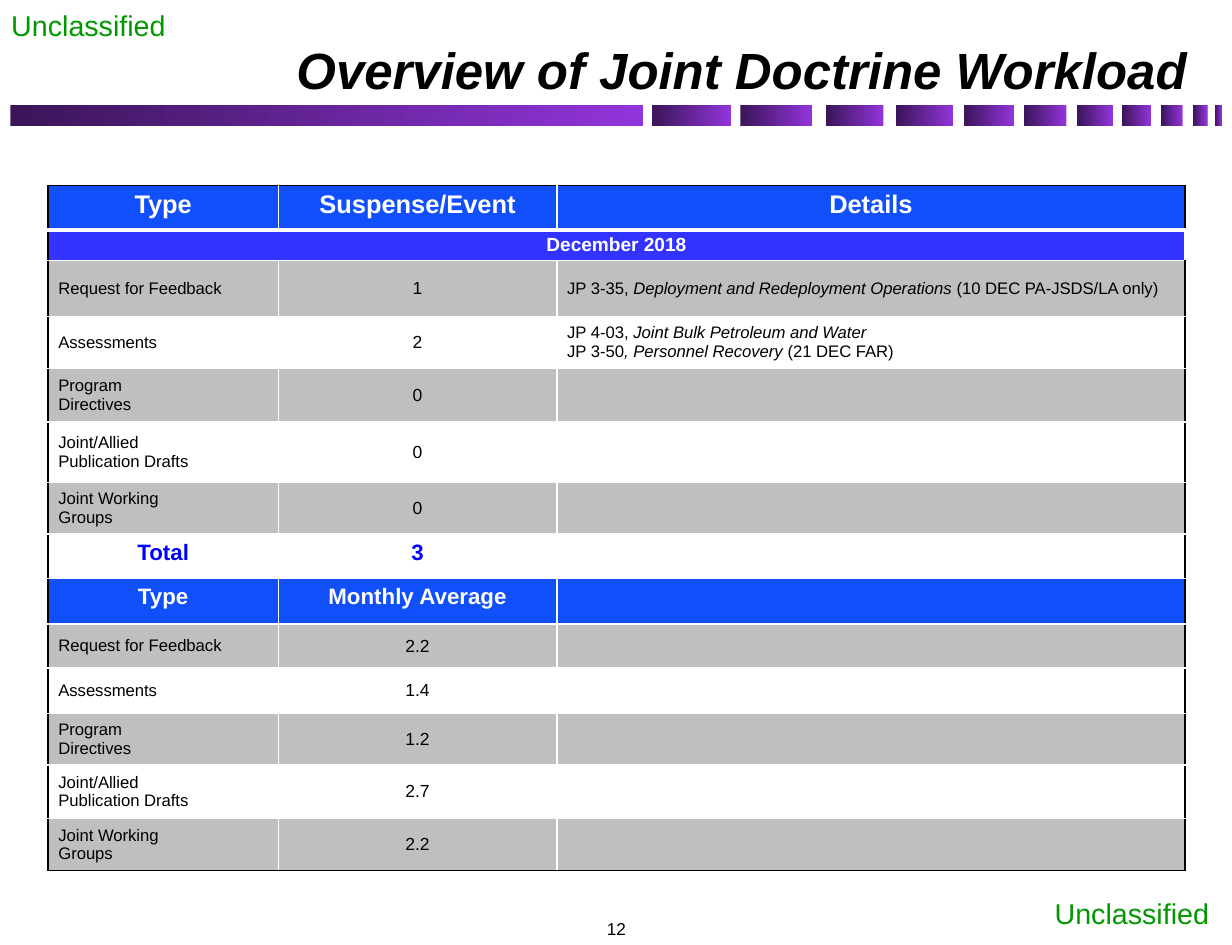
from collections import namedtuple

from lxml import etree
from pptx import Presentation
from pptx.dml.color import RGBColor
from pptx.enum import shapes, text
from pptx.oxml.ns import qn
from pptx.util import Pt

BLACK = RGBColor(0x00, 0x00, 0x00)
WHITE = RGBColor(0xFF, 0xFF, 0xFF)
GREY = RGBColor(0xBF, 0xBF, 0xBF)
GREEN = RGBColor(0x00, 0x99, 0x00)
HEADER_BLUE = RGBColor(0x11, 0x4F, 0xFB)
MONTH_BLUE = RGBColor(0x33, 0x33, 0xFF)
TOTAL_BLUE = RGBColor(0x00, 0x00, 0xFF)
DARK_PURPLE = RGBColor(0x3A, 0x15, 0x58)
PURPLE = RGBColor(0x92, 0x34, 0xDB)

LEFT, CENTER, RIGHT = text.PP_ALIGN.LEFT, text.PP_ALIGN.CENTER, text.PP_ALIGN.RIGHT
TOP, MIDDLE, BOTTOM = text.MSO_ANCHOR.TOP, text.MSO_ANCHOR.MIDDLE, text.MSO_ANCHOR.BOTTOM

# Left edge and width of each block in the bar under the title
BAR_BLOCKS = [(6.5, 397.5), (409.7, 49.5), (465.1, 45), (519.1, 36), (563, 36),
              (605.5, 31.5), (643, 27), (676.8, 22.5), (704.9, 18),
              (729.4, 13.5), (749.5, 9), (763.2, 4.5)]

COLUMN_WIDTHS = [144.7, 175, 394.6]
ROW_HEIGHTS = [27.6, 19.2, 35.5, 31.4, 33.9, 38, 31.4,
               28, 28.6, 27.6, 28.6, 31.4, 33.9, 31.7]

Look = namedtuple("Look", "fill color size bold anchor margins")
HEADER = Look(HEADER_BLUE, WHITE, 16, True, TOP, (5, 3))
MONTH = Look(MONTH_BLUE, WHITE, 12, True, MIDDLE, (5, 0))
TOTAL = Look(WHITE, TOTAL_BLUE, 14, True, TOP, (6.5, 3.6))
AVERAGE = TOTAL._replace(fill=HEADER_BLUE, color=WHITE)
ITEM = Look(GREY, BLACK, 10.5, False, MIDDLE, (6.5, 3.6))

# A cell is a list of paragraphs; a paragraph is a list of (text, italic) runs
TYPES = [["Request for Feedback"], ["Assessments"], ["Program", "Directives"],
         ["Joint/Allied", "Publication Drafts"], ["Joint Working", "Groups"]]
DETAILS = [
    [[("JP 3-35, ", False), ("Deployment and Redeployment Operations ", True),
      ("(10 DEC PA-JSDS/LA only)", False)]],
    [[("JP 4-03, ", False), ("Joint Bulk Petroleum and Water", True)],
     [("JP 3-50", False), (", Personnel Recovery ", True), ("(21 DEC FAR)", False)]],
    [], [], [],
]


def plain(*lines):
    return [[(line, False)] for line in lines]


def set_font(font, size, color, bold=False):
    font.name = "Arial"
    font.size = Pt(size)
    font.color.rgb = color
    font.bold = bold


def add_bar_block(slide, left, width):
    sp = slide.shapes.add_shape(shapes.MSO_SHAPE.RECTANGLE,
                                Pt(left), Pt(66), Pt(width), Pt(13.2))
    sp.shadow.inherit = False
    sp.line.fill.background()
    sp.fill.gradient()
    sp.fill.gradient_angle = 0
    for stop, color in zip(sp.fill.gradient_stops, (DARK_PURPLE, PURPLE)):
        stop.color.rgb = color


def add_label(slide, label, box, size, color, align=LEFT, anchor=TOP):
    tf = slide.shapes.add_textbox(*map(Pt, box)).text_frame
    tf.word_wrap = False
    tf.vertical_anchor = anchor
    p = tf.paragraphs[0]
    p.text = label
    p.alignment = align
    set_font(p.font, size, color)


def set_title(slide, title):
    sp = slide.shapes.title
    sp.left, sp.top, sp.width, sp.height = Pt(182), Pt(21), Pt(568), Pt(45.2)
    tf = sp.text_frame
    tf.auto_size = text.MSO_AUTO_SIZE.NONE
    tf.vertical_anchor = BOTTOM
    tf.margin_left = tf.margin_right = tf.margin_top = tf.margin_bottom = Pt(3.6)
    p = tf.paragraphs[0]
    p.text = title
    p.alignment = RIGHT
    set_font(p.font, 32, BLACK, True)
    p.font.italic = True


def set_borders(cell, sides):
    """Draw cell borders; sides lists (colour, width) for left, right, top, bottom."""
    tc_pr = cell._tc.get_or_add_tcPr()
    for i, (tag, (color, width)) in enumerate(zip(("a:lnL", "a:lnR", "a:lnT", "a:lnB"), sides)):
        ln = etree.Element(qn(tag), w=str(Pt(width)))
        fill = etree.SubElement(ln, qn("a:solidFill"))
        etree.SubElement(fill, qn("a:srgbClr"), val=str(color))
        tc_pr.insert(i, ln)


def fill_cell(cell, paragraphs, look, align):
    cell.fill.solid()
    cell.fill.fore_color.rgb = look.fill
    cell.vertical_anchor = look.anchor
    side, end = look.margins
    cell.margin_left = cell.margin_right = Pt(side)
    cell.margin_top = cell.margin_bottom = Pt(end)
    tf = cell.text_frame
    for i, runs in enumerate(paragraphs or [[]]):
        p = tf.add_paragraph() if i else tf.paragraphs[0]
        p.alignment = align
        set_font(p.font, look.size, look.color, look.bold)
        for words, italic in runs:
            r = p.add_run()
            r.text = words
            r.font.italic = italic


def item_rows(values, details):
    """Rows for the five work types, shaded grey and white in turn."""
    for i, (kind, value, detail) in enumerate(zip(TYPES, values, details)):
        look = ITEM._replace(fill=WHITE if i % 2 else GREY)
        yield look, [plain(*kind), plain(value), detail]


def workload_rows():
    yield HEADER, [plain("Type"), plain("Suspense/Event"), plain("Details")]
    yield MONTH, [plain("December 2018"), [], []]
    yield from item_rows(["1", "2", "0", "0", "0"], DETAILS)
    yield TOTAL, [plain("Total"), plain("3"), []]
    yield AVERAGE, [plain("Type"), plain("Monthly Average"), []]
    yield from item_rows(["2.2", "1.4", "1.2", "2.7", "2.2"], [[]] * len(TYPES))


def add_workload_table(slide):
    last_row, last_col = len(ROW_HEIGHTS) - 1, len(COLUMN_WIDTHS) - 1
    table = slide.shapes.add_table(
        last_row + 1, last_col + 1, Pt(30.2), Pt(116.8),
        Pt(sum(COLUMN_WIDTHS)), Pt(sum(ROW_HEIGHTS))).table
    table.first_row = table.horz_banding = False
    for column, width in zip(table.columns, COLUMN_WIDTHS):
        column.width = Pt(width)
    for row, height in zip(table.rows, ROW_HEIGHTS):
        row.height = Pt(height)

    outer, inner, header_rule = (BLACK, 1), (WHITE, 1), (WHITE, 3)
    for i, (look, contents) in enumerate(workload_rows()):
        for j, paragraphs in enumerate(contents):
            cell = table.cell(i, j)
            is_item = look.size == ITEM.size
            cell_look = look._replace(size=11) if is_item and j == 1 else look
            fill_cell(cell, paragraphs, cell_look, LEFT if is_item and j != 1 else CENTER)
            bottom = {0: header_rule, last_row: outer}.get(i, inner)
            set_borders(cell, [outer if j == 0 else inner,
                               outer if j == last_col else inner,
                               outer if i == 0 else inner, bottom])
    table.cell(1, 0).merge(table.cell(1, last_col))


def main():
    prs = Presentation()
    prs.slide_width, prs.slide_height = Pt(774), Pt(594)
    slide = prs.slides.add_slide(prs.slide_layouts[5])
    for left, width in BAR_BLOCKS:
        add_bar_block(slide, left, width)
    add_label(slide, "Unclassified", (0, 1.5, 112.3, 29), 18, GREEN)
    add_label(slide, "Unclassified", (655.5, 559.5, 112.3, 29), 18, GREEN)
    add_label(slide, "12", (306.7, 554.4, 161.3, 39.6), 10.8, BLACK, CENTER, BOTTOM)
    set_title(slide, "Overview of Joint Doctrine Workload")
    add_workload_table(slide)
    prs.save("out.pptx")


if __name__ == "__main__":
    main()
